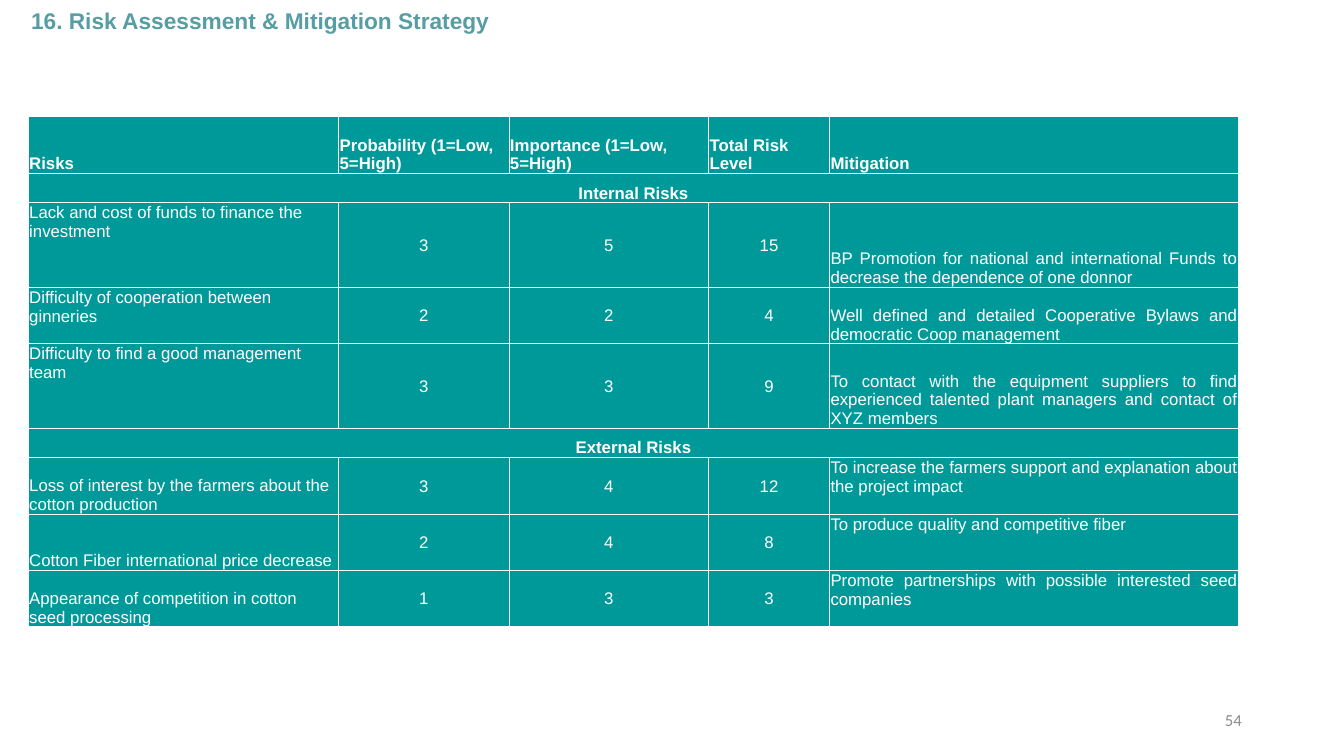
"""Build the risk assessment and mitigation slide."""
from dataclasses import dataclass

from lxml.etree import SubElement
from pptx import Presentation
from pptx.dml.color import RGBColor
from pptx.enum.text import MSO_ANCHOR as Anchor, PP_ALIGN as Align
from pptx.oxml.ns import qn
from pptx.util import Pt

COLORS = {"title": "569DA4", "cell": "009999", "white": "FFFFFF", "number": "8C8C8C"}
COLUMN_WIDTHS = (221.76, 121.68, 142.56, 86.4, 292.32)
HEADER_HEIGHT, SECTION_HEIGHT = 41.04, 20.88
HEADERS = ("Risks", "Probability (1=Low, 5=High)", "Importance (1=Low, 5=High)",
           "Total Risk Level", "Mitigation")


@dataclass(frozen=True)
class TextStyle:
    size: float
    color: str
    font: str = "Arial"
    bold: bool = False
    align: Align = Align.LEFT
    anchor: Anchor = Anchor.MIDDLE


@dataclass(frozen=True)
class Label:
    text: str
    left: float
    top: float
    width: float
    height: float
    style: TextStyle
    inset_top: float = 3.6


@dataclass(frozen=True)
class Risk:
    name: str
    probability: int
    importance: int
    mitigation: str
    height: float = 40.32


@dataclass(frozen=True)
class Section:
    title: str
    risk_anchor: Anchor
    mitigation_anchor: Anchor
    risks: tuple[Risk, ...]


LABELS = (
    Label("16. Risk Assessment & Mitigation Strategy", 15.12, 5.76, 594, 35.28,
          TextStyle(16.2, "title", bold=True, anchor=Anchor.TOP), inset_top=1),
    Label("54", 678.24, 500.4, 216, 28.8,
          TextStyle(12, "number", "Calibri", align=Align.RIGHT)),
)
SECTIONS = (
    Section("Internal Risks", Anchor.TOP, Anchor.BOTTOM, (
        Risk("Lack and cost of funds to finance the investment", 3, 5,
             "BP Promotion for national and international Funds to decrease "
             "the dependence of one donnor", 60.48),
        Risk("Difficulty of cooperation between ginneries", 2, 2,
             "Well defined and detailed Cooperative Bylaws and democratic Coop management"),
        Risk("Difficulty to find a good management team", 3, 3,
             "To contact with the equipment suppliers to find experienced talented "
             "plant managers and contact of XYZ members", 60.48),
    )),
    Section("External Risks", Anchor.BOTTOM, Anchor.TOP, (
        Risk("Loss of interest by the farmers about the cotton production", 3, 4,
             "To increase the farmers support and explanation about the project impact"),
        Risk("Cotton Fiber international price decrease", 2, 4,
             "To produce quality and competitive fiber"),
        Risk("Appearance of competition in cotton seed processing", 1, 3,
             "Promote partnerships with possible interested seed companies"),
    )),
)


def format_text(text_frame, text: str, style: TextStyle) -> None:
    text_frame.text = text
    paragraph = text_frame.paragraphs[0]
    paragraph.alignment = style.align
    for run in paragraph.runs:
        run.font.name = style.font
        run.font.size = Pt(style.size)
        run.font.bold = style.bold
        run.font.color.rgb = RGBColor.from_string(COLORS[style.color])


def add_label(slide, label: Label) -> None:
    shape = slide.shapes.add_textbox(Pt(label.left), Pt(label.top),
                                     Pt(label.width), Pt(label.height))
    text_frame = shape.text_frame
    text_frame.word_wrap = True
    text_frame.vertical_anchor = label.style.anchor
    text_frame.margin_top = Pt(label.inset_top)
    format_text(text_frame, label.text, label.style)
    text_frame.paragraphs[0].line_spacing = 0.9


def style_cell(cell) -> None:
    cell.margin_left = cell.margin_right = cell.margin_top = Pt(0.72)
    cell.margin_bottom = Pt(0)
    properties = cell._tc.get_or_add_tcPr()
    for side in ("lnL", "lnR", "lnT", "lnB"):
        border = SubElement(properties, qn(f"a:{side}"), w=str(Pt(0.5)))
        fill = SubElement(border, qn("a:solidFill"))
        SubElement(fill, qn("a:srgbClr"), val=COLORS["white"])
    cell.fill.solid()
    cell.fill.fore_color.rgb = RGBColor.from_string(COLORS["cell"])


def fill_cell(cell, text: str, style: TextStyle) -> None:
    format_text(cell.text_frame, text, style)
    cell.vertical_anchor = style.anchor


def add_risk_table(slide) -> None:
    heights = [HEADER_HEIGHT]
    for section in SECTIONS:
        heights += [SECTION_HEIGHT, *(risk.height for risk in section.risks)]
    table = slide.shapes.add_table(len(heights), len(COLUMN_WIDTHS), Pt(20.16), Pt(82.8),
                                   Pt(sum(COLUMN_WIDTHS)), Pt(sum(heights))).table
    table.first_row = table.horz_banding = False
    for column, width in zip(table.columns, COLUMN_WIDTHS):
        column.width = Pt(width)
    for row, height in zip(table.rows, heights):
        row.height = Pt(height)
    for cell in table.iter_cells():
        style_cell(cell)

    header_style = TextStyle(12, "white", bold=True, anchor=Anchor.BOTTOM)
    section_style = TextStyle(12, "white", bold=True, align=Align.CENTER, anchor=Anchor.BOTTOM)
    score_style = TextStyle(12, "white", align=Align.CENTER)
    for column_index, header in enumerate(HEADERS):
        fill_cell(table.cell(0, column_index), header, header_style)
    row_index = 1
    for section in SECTIONS:
        banner = table.cell(row_index, 0)
        banner.merge(table.cell(row_index, len(COLUMN_WIDTHS) - 1))
        fill_cell(banner, section.title, section_style)
        risk_style = TextStyle(12, "white", anchor=section.risk_anchor)
        mitigation_style = TextStyle(12, "white", align=Align.JUSTIFY,
                                     anchor=section.mitigation_anchor)
        styles = (risk_style, score_style, score_style, score_style, mitigation_style)
        for row_index, risk in enumerate(section.risks, row_index + 1):
            values = (risk.name, risk.probability, risk.importance,
                      risk.probability * risk.importance, risk.mitigation)
            for column_index, (value, style) in enumerate(zip(values, styles)):
                fill_cell(table.cell(row_index, column_index), str(value), style)
        row_index += 1


def main() -> None:
    presentation = Presentation()
    presentation.slide_width, presentation.slide_height = Pt(960), Pt(540)
    slide = presentation.slides.add_slide(presentation.slide_layouts[6])
    add_risk_table(slide)
    for label in LABELS:
        add_label(slide, label)
    presentation.save("out.pptx")


if __name__ == "__main__":
    main()
